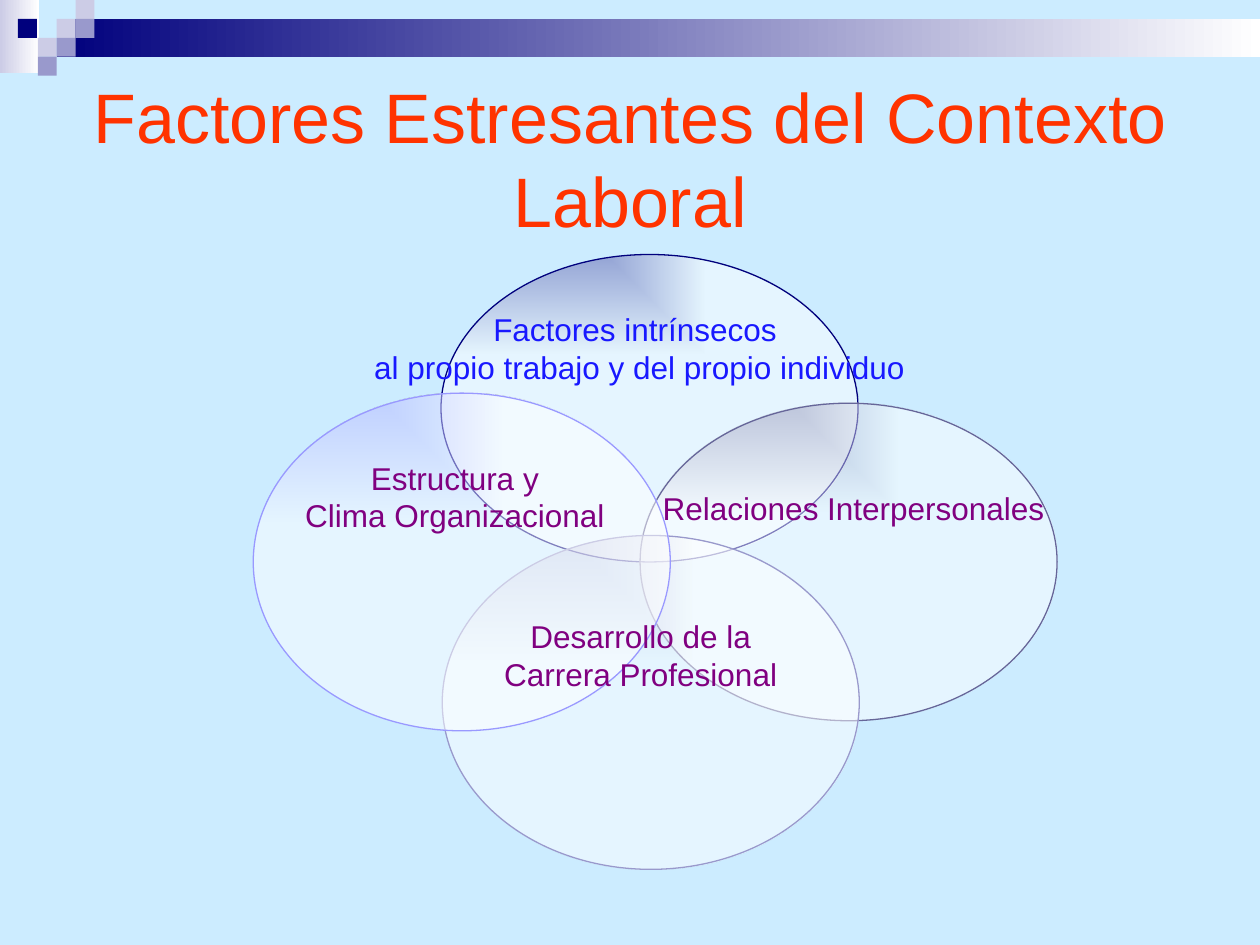
from lxml.etree import SubElement
from pptx import Presentation
from pptx.dml.color import RGBColor
from pptx.enum.shapes import MSO_SHAPE
from pptx.enum.text import MSO_ANCHOR, PP_ALIGN
from pptx.oxml.ns import qn
from pptx.util import Inches, Pt

SKY = RGBColor(0xCC, 0xEC, 0xFF)
WHITE = RGBColor(0xFF, 0xFF, 0xFF)
NAVY = RGBColor(0x00, 0x00, 0x7D)
LAVENDER = RGBColor(0xCC, 0xCC, 0xE6)
LILAC = RGBColor(0x99, 0x99, 0xCC)
SLATE = RGBColor(0x66, 0x66, 0x99)
PERIWINKLE = RGBColor(0x99, 0x99, 0xFF)
ORANGE = RGBColor(0xFF, 0x33, 0x00)
BLUE = RGBColor(0x18, 0x18, 0xFF)
PURPLE = RGBColor(0x80, 0x00, 0x80)

deck = Presentation()
deck.slide_width, deck.slide_height = Inches(10), Inches(7.5)
COLUMN = deck.slide_width / 100
ROW = deck.slide_height / 75
page = deck.slides.add_slide(deck.slide_layouts[6])
page.background.fill.solid()
page.background.fill.fore_color.rgb = SKY


def add_shape(kind, left, top, width, height, start, end=None):
    """Add a shape placed in grid units; an end colour makes the fill a gradient."""
    shape = page.shapes.add_shape(kind, round(left * COLUMN), round(top * ROW),
                                  round(width * COLUMN), round(height * ROW))
    shape.shadow.inherit = False
    shape.line.fill.background()
    if end is None:
        shape.fill.solid()
        shape.fill.fore_color.rgb = start
    else:
        shape.fill.gradient()
        shape.fill.gradient_angle = 0
        for stop, color in zip(shape.fill.gradient_stops, (start, end)):
            stop.color.rgb = color
    return shape


def add_text(text, left, top, width, height, size=18, color=PURPLE,
             wrap=False, anchor=MSO_ANCHOR.TOP):
    box = page.shapes.add_textbox(round(left * COLUMN), round(top * ROW),
                                  round(width * COLUMN), round(height * ROW))
    frame = box.text_frame
    frame.word_wrap = wrap
    frame.vertical_anchor = anchor
    frame.text = text
    for para in frame.paragraphs:
        para.alignment = PP_ALIGN.CENTER
        para.font.name = "Arial"
        para.font.size = Pt(size)
        para.font.color.rgb = color


# Header band with its small squares
add_shape(MSO_SHAPE.RECTANGLE, 0, 0, 3.1, 5.8, LAVENDER, WHITE)
add_shape(MSO_SHAPE.RECTANGLE, 4.5, 1.5, 95.5, 3, NAVY, WHITE)
SQUARE = 1.5
for column, row, color in [
    (3, 1, LAVENDER), (4, 0, LAVENDER), (4, 1, LILAC), (2, 2, LAVENDER),
    (0.95, 1, NAVY), (3, 2, LILAC), (2, 3, LILAC),
]:
    add_shape(MSO_SHAPE.RECTANGLE, column * SQUARE, row * SQUARE,
              SQUARE, SQUARE, color)

add_text("Factores Estresantes del Contexto Laboral", 5, 5, 90, 15,
         size=40, color=ORANGE, wrap=True, anchor=MSO_ANCHOR.MIDDLE)

# Overlapping ellipses, half transparent, shaded from the top left corner
for left, top, height, color in [
    (35, 20.2, 24.4, NAVY), (50.8, 32, 25.2, SLATE),
    (35.1, 42.5, 26.5, LILAC), (20.1, 31.2, 26.8, PERIWINKLE),
]:
    ellipse = add_shape(MSO_SHAPE.OVAL, left, top, 33.1, height, color, WHITE)
    ellipse.line.color.rgb = color
    ellipse.line.width = Pt(0.75)
    gradient = ellipse.fill._xPr.find(qn("a:gradFill"))
    for tint in gradient.findall(".//" + qn("a:srgbClr")):
        SubElement(tint, qn("a:alpha"), val="50000")
    shade = SubElement(gradient, qn("a:path"), path="rect")
    SubElement(shade, qn("a:fillToRect"), r="100000", b="100000")
    gradient.replace(gradient.find(qn("a:lin")), shade)

add_text("Factores intrínsecos \nal propio trabajo y del propio individuo",
         28.5, 24.1, 44.5, 7.1, color=BLUE)
add_text("Relaciones Interpersonales", 51.6, 38.3, 32.3, 4)
add_text("Desarrollo de la\nCarrera Profesional", 39, 48.5, 23.7, 7)
add_text("Estructura y\nClima Organizacional", 23.2, 35.9, 25.8, 7)

deck.save("out.pptx")
